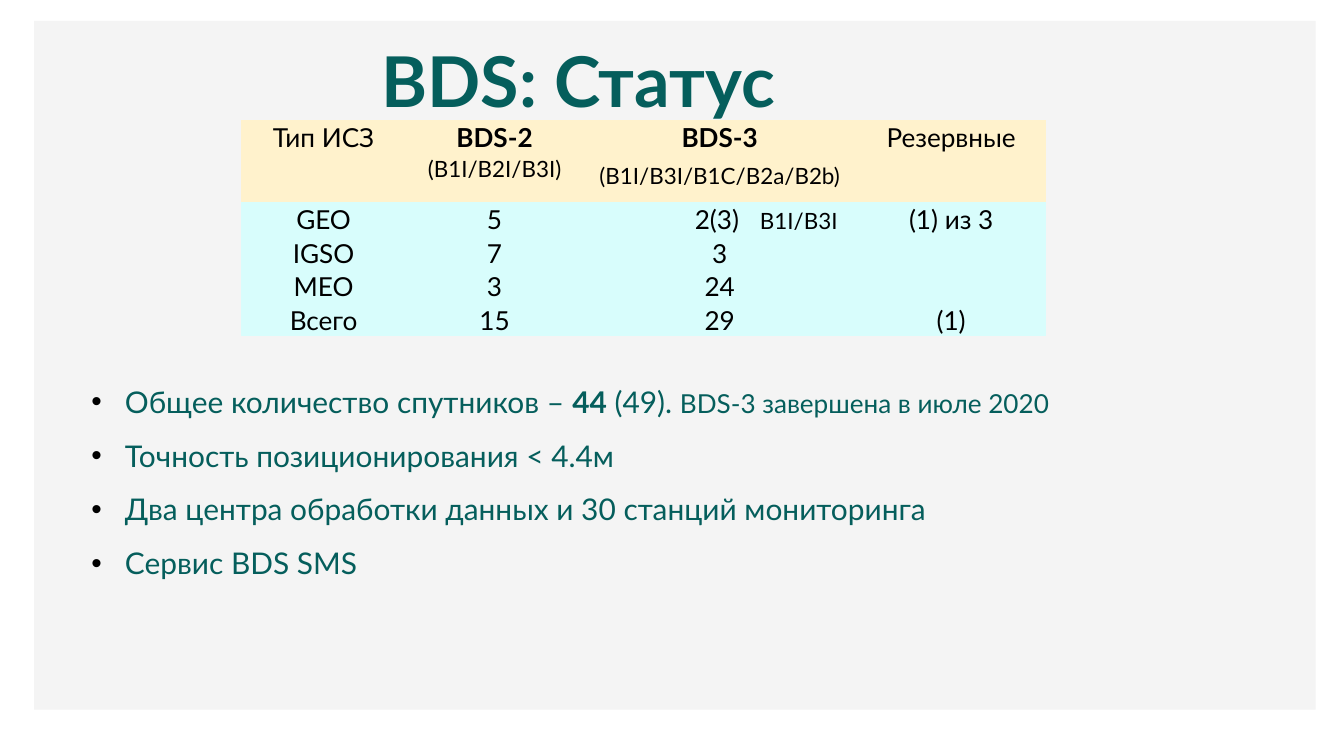
import pptx
import pptx.dml.color
import pptx.enum.shapes
import pptx.enum.text
import pptx.oxml
import pptx.oxml.ns
import pptx.util

Inches = pptx.util.Inches
ALIGN = pptx.enum.text.PP_ALIGN
TEAL, BLACK = "055E5C", "000000"
NO_STYLE = "{2D5ABB26-0587-4C30-8999-92F81FD0307C}"
NAMESPACE = pptx.oxml.ns.nsdecls("a")


def paint(target, color):
    """Give a fill or font a solid colour from a hex string."""
    if hasattr(target, "solid"):
        target.solid()
        target.fore_color.rgb = pptx.dml.color.RGBColor.from_string(color)
    else:
        target.color.rgb = pptx.dml.color.RGBColor.from_string(color)


def write(para, spans, color, **layout):
    """Fill a paragraph with (text, size, bold) spans."""
    for name, value in layout.items():
        setattr(para, name, value)
    for text, size, bold in spans:
        span = para.add_run()
        span.text = text
        formats = {"name": "Lato", "size": pptx.util.Pt(size), "bold": bold}
        for name, value in formats.items():
            setattr(span.font, name, value)
        paint(span.font, color)


deck = pptx.Presentation()
deck.slide_width, deck.slide_height = Inches(20), Inches(11.25)
page = deck.slides.add_slide(deck.slide_layouts[5])

# Grey panel, behind the title
panel = page.shapes.add_shape(
    pptx.enum.shapes.MSO_SHAPE.RECTANGLE,
    Inches(0.51), Inches(0.31), Inches(19.07), Inches(10.25))
panel.shadow.inherit = False
paint(panel.fill, "F4F4F4")
panel.line.fill.background()
page.shapes._spTree.insert(2, panel._element)

# Title and bullet box share the same frame settings
title = page.shapes.title
title.left, title.top = Inches(5.68), Inches(0.31)
title.width, title.height = Inches(10.12), Inches(1.51)
bullet_box = page.shapes.add_textbox(
    Inches(0.95), Inches(5.44), Inches(18.53), Inches(4.44))
frame_format = {
    "margin_left": 0, "margin_top": 0, "margin_right": 0, "margin_bottom": 0,
    "word_wrap": True,
    "vertical_anchor": pptx.enum.text.MSO_ANCHOR.TOP,
    "auto_size": pptx.enum.text.MSO_AUTO_SIZE.NONE,
}
for box in (title, bullet_box):
    for name, value in frame_format.items():
        setattr(box.text_frame, name, value)
write(title.text_frame.paragraphs[0], [("BDS: Статус", 75, True)], TEAL,
      alignment=ALIGN.LEFT, line_spacing=1.2)

# Bullets
bullets = [
    [("Общее количество спутников – ", 32, False), ("44", 32, True),
     (" (49). ", 32, False), ("BDS-3 завершена в июле 2020", 28, False)],
    [("Точность позиционирования < 4.4м", 32, False)],
    [("Два центра обработки данных и 30 станций мониторинга", 32, False)],
    [("Сервис BDS SMS", 32, False)],
]
for index, spans in enumerate(bullets):
    frame = bullet_box.text_frame
    para = frame.add_paragraph() if index else frame.paragraphs[0]
    write(para, spans, TEAL, level=1, line_spacing=1.5)
    properties = para._p.get_or_add_pPr()
    properties.set("marL", str(Inches(0.91)))
    properties.set("indent", str(Inches(-0.5)))
    for xml in (f'<a:buClr {NAMESPACE}><a:srgbClr val="{BLACK}"/></a:buClr>',
                f'<a:buFont {NAMESPACE} typeface="Arial"/>',
                f'<a:buChar {NAMESPACE} char="•"/>'):
        properties.append(pptx.oxml.parse_xml(xml))

# Satellite table: each cell is a list of paragraphs, each a list of spans
header = [
    [[("Тип ИСЗ", 28, False)]],
    [[("BDS-2 ", 28, True), ("(B1I/B2I/B3I)", 24, False)]],
    [[("BDS-3", 28, True)], [("(B1I/B3I/B1C/B2a/B2b)", 24, False)]],
    [[("Резервные", 28, False)]],
]
counts = [
    ("GEO", "5", "2(3)\t", "(1) из 3"),
    ("IGSO", "7", "3", ""),
    ("MEO", "3", "24", ""),
    ("Всего", "15", "29", "(1)"),
]
rows = [header] + [
    [[[(text, 28, False)]] if text else [] for text in row] for row in counts]
rows[1][2][0].append(("B1I/B3I", 24, False))

widths = [2.47, 2.62, 4.08, 2.81]
heights = [1.22] + [0.5] * 4
graphic = page.shapes.add_table(
    len(rows), len(widths), Inches(3.58), Inches(1.78),
    Inches(sum(widths)), Inches(sum(heights)))
table = graphic.table
table.first_row = table.horz_banding = False
table._tbl.tblPr.find(pptx.oxml.ns.qn("a:tableStyleId")).text = NO_STYLE
for column, width in zip(table.columns, widths):
    column.width = Inches(width)
for row, height in zip(table.rows, heights):
    row.height = Inches(height)

for row_index, row in enumerate(rows):
    for column_index, paragraphs in enumerate(row):
        cell = table.cell(row_index, column_index)
        paint(cell.fill, "D8FDFC" if row_index else "FFF2CC")
        cell.margin_left = cell.margin_right = Inches(0.07)
        cell.margin_top = cell.margin_bottom = 0
        for index, spans in enumerate(paragraphs):
            frame = cell.text_frame
            para = frame.add_paragraph() if index else frame.paragraphs[0]
            write(para, spans, BLACK, alignment=ALIGN.CENTER,
                  line_spacing=1.07, space_after=pptx.util.Pt(8))

# The GEO count stays in line with its column, its signals follow at a tab
geo_cell = table.cell(1, 2)
geo_cell.margin_left = Inches(1.67)
geo_para = geo_cell.text_frame.paragraphs[0]
geo_para.alignment = ALIGN.LEFT
geo_para._p.get_or_add_pPr().append(pptx.oxml.parse_xml(
    f'<a:tabLst {NAMESPACE}><a:tab pos="{Inches(0.97)}" algn="l"/></a:tabLst>'))

deck.save("out.pptx")
